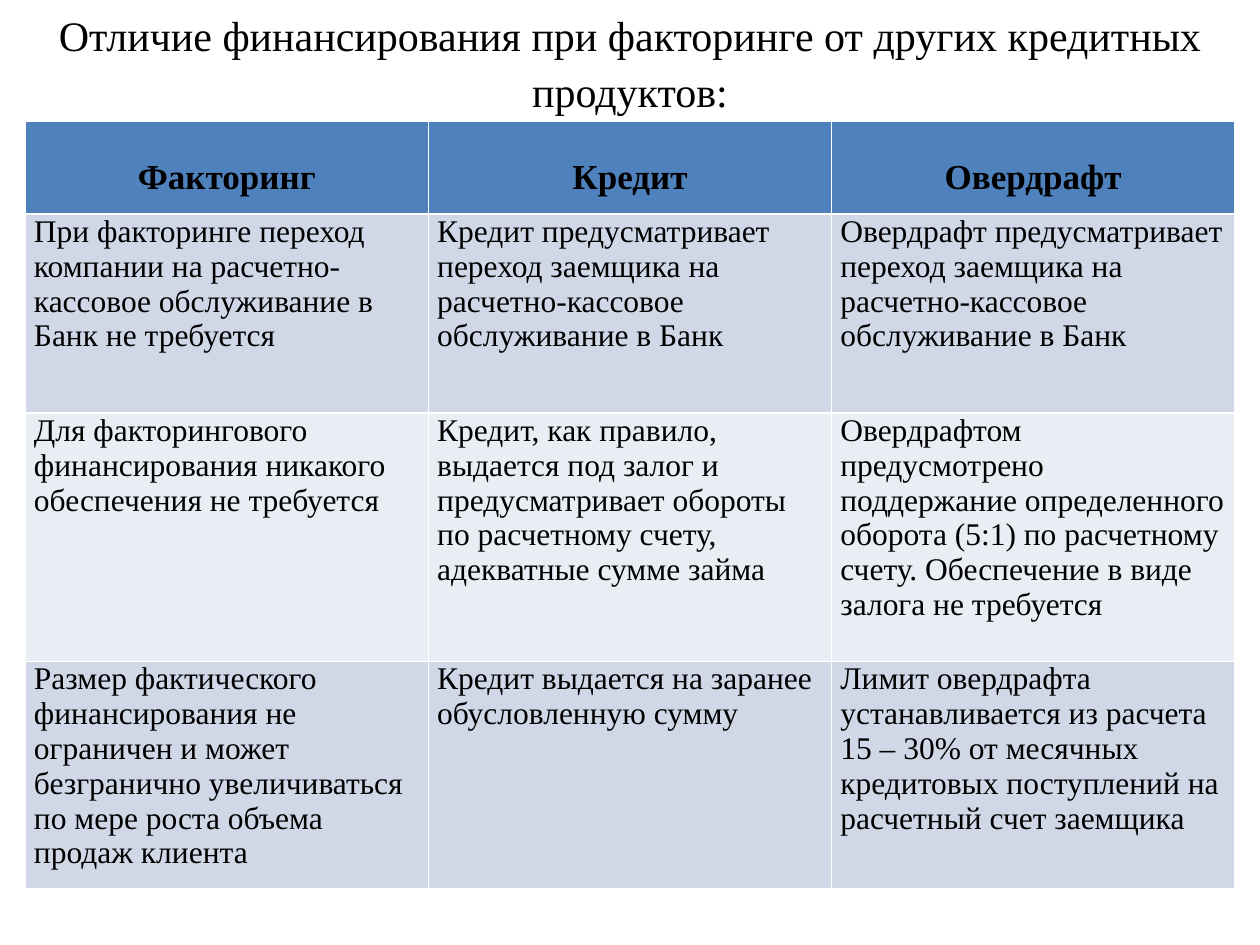
from pptx import Presentation
from pptx import util as u
from pptx.dml.color import RGBColor
from pptx.enum import text

COLORS = {"ink": "000000", "header": "4F81BD", "odd": "D0D8E8", "even": "E9EDF4"}
TITLE = "Отличие финансирования при факторинге от других кредитных продуктов:"
ROW_HEIGHTS = [0.74, 1.58, 1.97, 1.79]
COMPARISON = [
    ["Факторинг", "Кредит", "Овердрафт"],
    ["При факторинге переход компании на расчетно-кассовое обслуживание в Банк не требуется",
     "Кредит предусматривает переход заемщика на расчетно-кассовое обслуживание в Банк",
     "Овердрафт предусматривает переход заемщика на расчетно-кассовое обслуживание в Банк"],
    ["Для факторингового финансирования никакого обеспечения не требуется",
     "Кредит, как правило, выдается под залог и предусматривает обороты по расчетному счету, "
     "адекватные сумме займа",
     "Овердрафтом предусмотрено поддержание определенного оборота (5:1) по расчетному счету. "
     "Обеспечение в виде залога не требуется"],
    ["Размер фактического финансирования не ограничен и может безгранично увеличиваться "
     "по мере роста объема продаж клиента",
     "Кредит выдается на заранее обусловленную сумму",
     "Лимит овердрафта устанавливается из расчета 15 – 30% от месячных кредитовых поступлений "
     "на расчетный счет заемщика"],
]


class Page:
    """Holds the slide and the style of its title and table."""

    font = "Times New Roman"

    def __init__(self, deck):
        self.slide = deck.slides.add_slide(deck.slide_layouts[6])

    def set_words(self, frame, words, size, bold=False, align=text.PP_ALIGN.LEFT, spacing=1.0):
        frame.text = words
        para = frame.paragraphs[0]
        para.alignment = align
        para.line_spacing = spacing
        for span in para.runs:
            span.font.name = self.font
            span.font.size = u.Pt(size)
            span.font.bold = bold
            span.font.color.rgb = RGBColor.from_string(COLORS["ink"])

    def title(self, words, left, top, width, height):
        box = self.slide.shapes.add_textbox(*map(u.Inches, (left, top, width, height)))
        box.text_frame.word_wrap = True
        self.set_words(box.text_frame, words, 24, align=text.PP_ALIGN.CENTER, spacing=1.1)

    def cell(self, cell, words, fill, header):
        cell.margin_left = cell.margin_right = u.Inches(0.07)
        cell.margin_top = cell.margin_bottom = 0
        cell.fill.solid()
        cell.fill.fore_color.rgb = RGBColor.from_string(COLORS[fill])
        if header:
            cell.vertical_anchor = text.MSO_ANCHOR.MIDDLE
            self.set_words(cell.text_frame, words, 20, True, text.PP_ALIGN.CENTER, 1.5)
        else:
            self.set_words(cell.text_frame, words, 18)

    def table(self, rows, heights, left, top, width):
        frame = self.slide.shapes.add_table(
            len(rows), len(rows[0]), *map(u.Inches, (left, top, width, sum(heights))))
        for index, (row, height) in enumerate(zip(rows, heights)):
            frame.table.rows[index].height = u.Inches(height)
            fill = "header" if index == 0 else "odd" if index % 2 else "even"
            for column, words in enumerate(row):
                self.cell(frame.table.cell(index, column), words, fill, index == 0)


def main():
    deck = Presentation()
    deck.slide_width, deck.slide_height = u.Inches(10), u.Inches(7.5)
    page = Page(deck)
    page.title(TITLE, 0.2, -0.01, 9.6, 0.91)
    page.table(COMPARISON, ROW_HEIGHTS, 0.2, 0.96, 9.6)
    deck.save("out.pptx")


if __name__ == "__main__":
    main()
